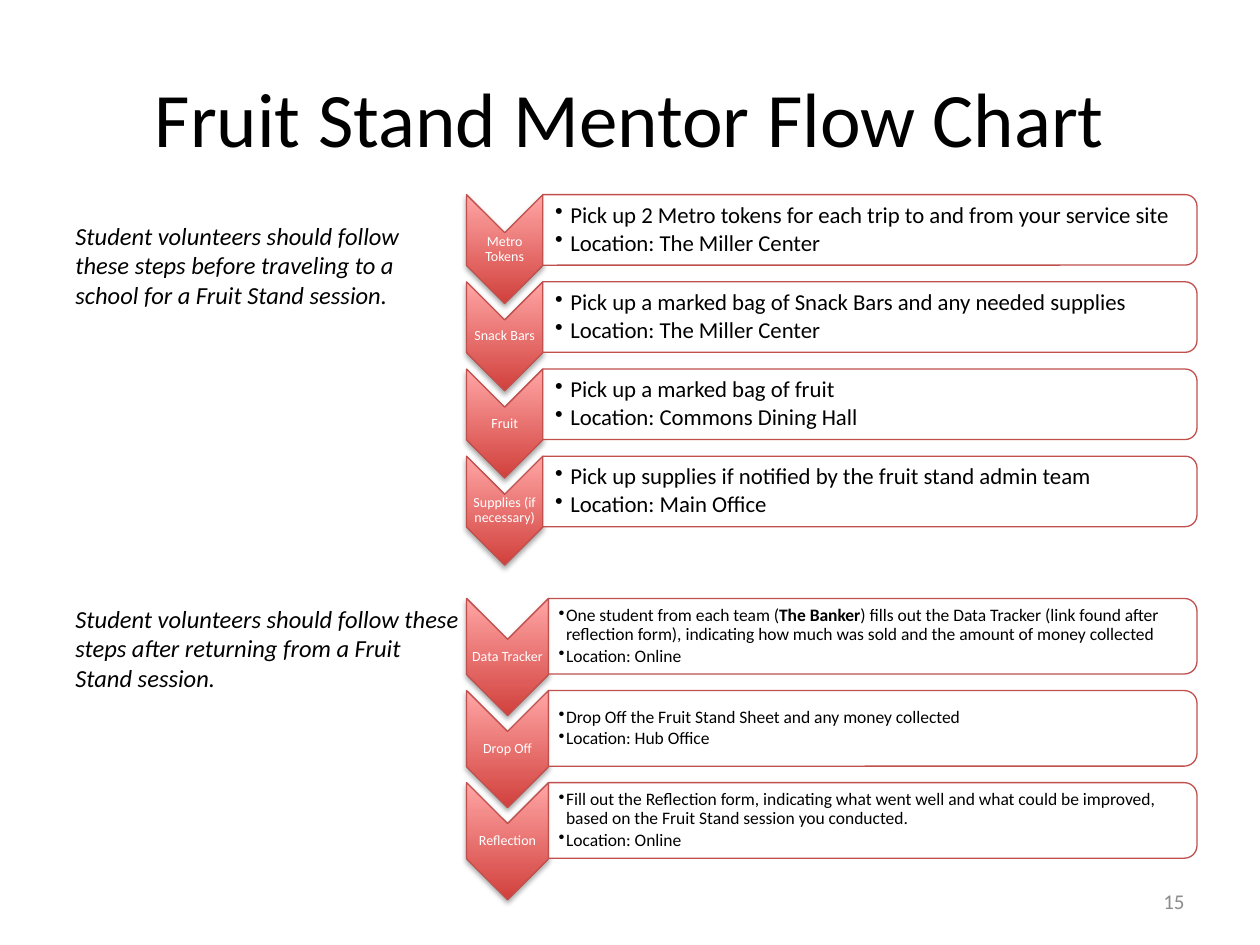
"""Build the fruit stand mentor flow chart slide."""
from dataclasses import dataclass

from lxml import etree
from pptx import Presentation
from pptx.dml.color import RGBColor
from pptx.enum.shapes import MSO_SHAPE as Shape
from pptx.enum.text import MSO_ANCHOR as Anchor, PP_ALIGN as Align
from pptx.oxml import parse_xml
from pptx.oxml.ns import nsdecls, qn
from pptx.util import Emu, Inches, Pt

BLACK = RGBColor(0x00, 0x00, 0x00)
WHITE = RGBColor(0xFF, 0xFF, 0xFF)
GREY = RGBColor(0x8C, 0x8C, 0x8C)
BORDER = RGBColor(0xC0, 0x50, 0x4D)
DEEP_RED = RGBColor(0xD1, 0x40, 0x3C)
LIGHT_RED = RGBColor(0xFF, 0xA6, 0xA5)

COLUMNS, ROWS = 100, 75
STEP_LEFT, BAR_RIGHT = 37.03, 95
SHADOW = (
    f'<a:effectLst {nsdecls("a")}><a:outerShdw blurRad="{Pt(3.1)}" dist="{Pt(1.8)}" '
    'dir="5400000" rotWithShape="0"><a:srgbClr val="000000"><a:alpha val="35000"/>'
    '</a:srgbClr></a:outerShdw></a:effectLst>'
)


@dataclass
class Flow:
    """Measures of one chain of steps, in grid units and points."""
    top: float
    pitch: float
    chevron_width: float
    chevron_height: float
    bar_height: float
    text_height: float
    size: int
    indent: float
    inset: float
    steps: list


BEFORE = Flow(15.45, 6.92, 6.05, 8.65, 5.6, 5.1, 13, 0.12, 0.1, [
    ("Metro Tokens", ["Pick up 2 Metro tokens for each trip to and from your service site"],
     "The Miller Center"),
    ("Snack Bars", ["Pick up a marked bag of Snack Bars and any needed supplies"],
     "The Miller Center"),
    ("Fruit", ["Pick up a marked bag of fruit"], "Commons Dining Hall"),
    ("Supplies (if necessary)", ["Pick up supplies if notified by the fruit stand admin team"],
     "Main Office"),
])
AFTER = Flow(47.5, 7.31, 6.5, 9.3, 6, 5.4, 10, 0.06, 0.08, [
    ("Data Tracker",
     ["One student from each team (", "The Banker",
      ") fills out the Data Tracker (link found after reflection form), "
      "indicating how much was sold and the amount of money collected"], "Online"),
    ("Drop Off", ["Drop Off the Fruit Stand Sheet and any money collected"], "Hub Office"),
    ("Reflection",
     ["Fill out the Reflection form, indicating what went well and what could be improved, "
      "based on the Fruit Stand session you conducted."], "Online"),
])


class FlowSlide:
    """Hold the style and the current slide, and draw on a grid."""

    def __init__(self, deck, font="Calibri"):
        self.font = font
        self.column, self.row = deck.slide_width / COLUMNS, deck.slide_height / ROWS
        self.slide = deck.slides.add_slide(deck.slide_layouts[5])

    def place(self, left, top, width, height):
        """Turn grid units into slide lengths."""
        return [Emu(round(units * cell)) for units, cell in
                zip((left, top, width, height), (self.column, self.row) * 2)]

    def style(self, paragraph, size, color, align=Align.LEFT):
        """Format a whole paragraph."""
        paragraph.alignment = align
        font = paragraph.font
        font.name, font.size, font.color.rgb = self.font, Pt(size), color

    def title(self, wording, *area):
        """Fill and move the title placeholder."""
        heading = self.slide.shapes.title
        heading.left, heading.top, heading.width, heading.height = self.place(*area)
        heading.text_frame.text = wording
        heading.text_frame.vertical_anchor = Anchor.MIDDLE
        self.style(heading.text_frame.paragraphs[0], 44, BLACK, Align.CENTER)

    def frame(self, area, anchor=Anchor.MIDDLE, insets=None):
        """Add a wrapping text box and return its frame."""
        frame = self.slide.shapes.add_textbox(*self.place(*area)).text_frame
        frame.word_wrap, frame.vertical_anchor = True, anchor
        if insets:
            (frame.margin_left, frame.margin_top,
             frame.margin_right, frame.margin_bottom) = map(Inches, insets)
        return frame

    def note(self, wording, *area):
        """Add an italic remark."""
        remark = self.frame(area, Anchor.TOP).paragraphs[0]
        remark.text = wording
        self.style(remark, 14, BLACK)
        remark.font.italic = True

    def page_number(self, number, *area):
        """Add the page number."""
        page = self.frame(area).paragraphs[0]
        page.text = number
        self.style(page, 12, GREY, Align.RIGHT)

    def upright(self, kind, left, top, width, height):
        """Add a bordered shape turned a quarter to fill the given area."""
        shift = (width - height) / 2
        shape = self.slide.shapes.add_shape(
            kind, *self.place(left + shift, top - shift, height, width))
        shape.rotation = 90
        shape.shadow.inherit = False
        shape.line.color.rgb, shape.line.width = BORDER, Pt(0.75)
        return shape

    def chevron(self, label, *area):
        """Add a shaded downward chevron with its label."""
        left, top, width, height = area
        arrow = self.upright(Shape.CHEVRON, *area)
        arrow.fill.gradient()
        arrow.fill.gradient_angle = 90
        for stop, color in zip(arrow.fill.gradient_stops, (DEEP_RED, LIGHT_RED)):
            stop.color.rgb = color
        properties = arrow._element.spPr
        properties.find(qn("a:gradFill")).set("rotWithShape", "0")
        properties.replace(properties.find(qn("a:effectLst")), parse_xml(SHADOW))
        caption = self.frame((left, top + height * 0.35, width, height * 0.3),
                             insets=[0.01] * 4).paragraphs[0]
        caption.text, caption.line_spacing = label, 0.9
        self.style(caption, 8, WHITE, Align.CENTER)

    def bar(self, flow, top, task, location):
        """Add a rounded bar with the task and its location."""
        left = STEP_LEFT + flow.chevron_width
        width = BAR_RIGHT - left
        panel = self.upright(Shape.ROUND_2_SAME_RECTANGLE, left, top, width, flow.bar_height)
        panel.fill.solid()
        panel.fill.fore_color.rgb = WHITE
        tint = panel._element.spPr.find(qn("a:solidFill"))[0]
        etree.SubElement(tint, qn("a:alpha"), val="90000")
        area = left, top + (flow.bar_height - flow.text_height) / 2, width - 0.3, flow.text_height
        details = self.frame(area, insets=(flow.inset, 0.01, 0.01, 0.01))
        self.bullet(details.paragraphs[0], task, flow)
        self.bullet(details.add_paragraph(), [f"Location: {location}"], flow)

    def bullet(self, paragraph, parts, flow):
        """Write a bulleted line whose every second part is bold."""
        self.style(paragraph, flow.size, BLACK)
        paragraph.line_spacing, paragraph.space_after = 0.9, Pt(flow.size * 0.15)
        for index, part in enumerate(parts):
            run = paragraph.add_run()
            run.text = part
            if index % 2:
                run.font.bold = True
        properties = paragraph._p.get_or_add_pPr()
        properties.set("marL", str(Inches(flow.indent)))
        properties.set("indent", str(-Inches(flow.indent)))
        mark = parse_xml(f'<a:buChar {nsdecls("a")} char="•"/>')
        properties.find(qn("a:defRPr")).addprevious(mark)

    def chain(self, flow):
        """Draw every step of a flow at equal distances."""
        for index, (label, task, location) in enumerate(flow.steps):
            top = flow.top + index * flow.pitch
            self.chevron(label, STEP_LEFT, top, flow.chevron_width, flow.chevron_height)
            self.bar(flow, top, task, location)


def main():
    """Build and save the slide."""
    deck = Presentation()
    deck.slide_width, deck.slide_height = Inches(10), Inches(7.5)
    page = FlowSlide(deck)
    page.title("Fruit Stand Mentor Flow Chart", 5, 3, 90, 12.5)
    page.chain(BEFORE)
    page.note("Student volunteers should follow these steps before traveling "
              "to a school for a Fruit Stand session.", 5, 17.05, 30.2, 10.4)
    page.chain(AFTER)
    page.note("Student volunteers should follow these steps after returning "
              "from a Fruit Stand session.", 5, 47.45, 32.7, 10.4)
    page.page_number("15", 71.7, 69.5, 23.3, 4)
    deck.save("out.pptx")


if __name__ == "__main__":
    main()
